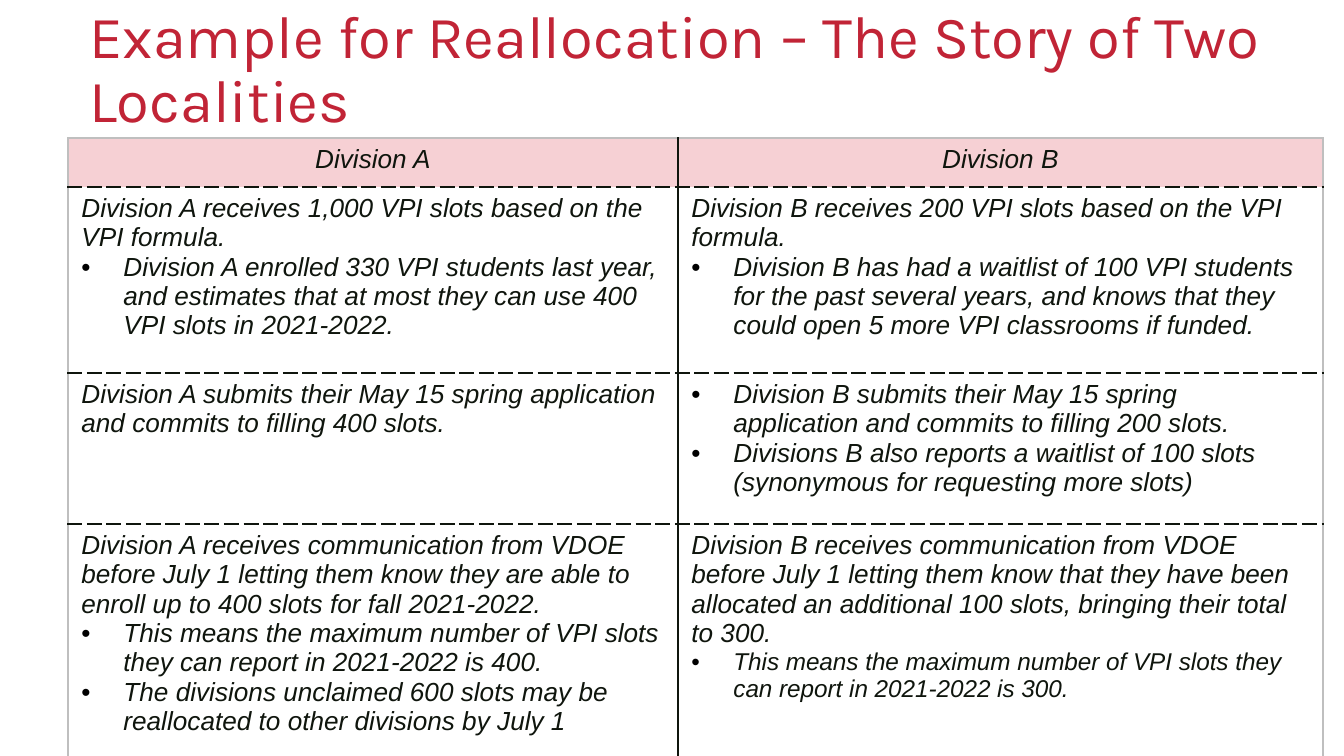
from dataclasses import dataclass

from lxml.etree import SubElement
from pptx import Presentation
from pptx.dml.color import RGBColor
from pptx.enum.text import MSO_ANCHOR as Anchor, PP_ALIGN as Align
from pptx.oxml.ns import qn
from pptx.util import Pt

EMU_PER_PX = 914400 / 134.4
INK = "0F150D"
OUTLINE = "BFBFBF"
HEADER_FILL = "F6D0D4"
BODY_FILL = "FFFFFF"
TITLE_COLOR = "C12436"
BULLET_INDENT = 42


@dataclass(frozen=True)
class Line:
    text: str
    bullet: bool = False
    size: int = 14
    align: Align = Align.LEFT


@dataclass(frozen=True)
class Row:
    height: int
    cells: tuple[list[Line], list[Line]]
    fill: str = BODY_FILL


COLUMN_WIDTHS = (610, 645)
ROWS = [
    Row(49, (
        [Line("Division A", align=Align.CENTER)],
        [Line("Division B", align=Align.CENTER)],
    ), HEADER_FILL),
    Row(186, (
        [Line("Division A receives 1,000 VPI slots based on the VPI formula."),
         Line("Division A enrolled 330 VPI students last year, and estimates that "
              "at most they can use 400 VPI slots in 2021-2022.", True)],
        [Line("Division B receives 200 VPI slots based on the VPI formula."),
         Line("Division B has had a waitlist of 100 VPI students for the past several "
              "years, and knows that they could open 5 more VPI classrooms if funded.", True)],
    )),
    Row(151, (
        [Line("Division A submits their May 15 spring application and commits to "
              "filling 400 slots.")],
        [Line("Division B submits their May 15 spring application and commits to "
              "filling 200 slots.", True),
         Line("Divisions B also reports a waitlist of 100 slots (synonymous for "
              "requesting more slots)", True)],
    )),
    Row(220, (
        [Line("Division A receives communication from VDOE before July 1 letting them "
              "know they are able to enroll up to 400 slots for fall 2021-2022."),
         Line("This means the maximum number of VPI slots they can report in "
              "2021-2022 is 400.", True),
         Line("The divisions unclaimed 600 slots may be reallocated to other "
              "divisions by July 1", True)],
        [Line("Division B receives communication from VDOE before July 1 letting them "
              "know that they have been allocated an additional 100 slots, bringing "
              "their total to 300."),
         Line("This means the maximum number of VPI slots they can report in "
              "2021-2022 is 300.", True, 13)],
    )),
]


def px(length: int) -> int:
    return round(length * EMU_PER_PX)


def rgb(color: str) -> RGBColor:
    return RGBColor.from_string(color)


def format_runs(paragraph, font_name: str, size: int, color: str, italic: bool) -> None:
    for run in paragraph.runs:
        run.font.name = font_name
        run.font.size = Pt(size)
        run.font.italic = italic
        run.font.color.rgb = rgb(color)


def add_bullet(paragraph) -> None:
    properties = paragraph._p.get_or_add_pPr()
    properties.set("marL", str(px(BULLET_INDENT)))
    properties.set("indent", str(-px(BULLET_INDENT)))
    bullet_color = SubElement(properties, qn("a:buClr"))
    SubElement(bullet_color, qn("a:srgbClr"), val="000000")
    SubElement(properties, qn("a:buFont"), typeface="Arial")
    SubElement(properties, qn("a:buChar"), char="•")


def add_border(cell, side: str, color: str, dash: str) -> None:
    properties = cell._tc.get_or_add_tcPr()
    border = SubElement(properties, qn(f"a:ln{side}"), w=str(Pt(1)))
    fill = SubElement(border, qn("a:solidFill"))
    SubElement(fill, qn("a:srgbClr"), val=color)
    SubElement(border, qn("a:prstDash"), val=dash)


def fill_cell(cell, lines: list[Line], fill: str, outer_sides: str) -> None:
    for side in "LRTB":
        outer = side in outer_sides
        dash = "sysDash" if side in "TB" and not outer else "solid"
        add_border(cell, side, OUTLINE if outer else INK, dash)
    cell.fill.solid()
    cell.fill.fore_color.rgb = rgb(fill)
    cell.text_frame.text = "\n".join(line.text for line in lines)
    for paragraph, line in zip(cell.text_frame.paragraphs, lines):
        if line.bullet:
            add_bullet(paragraph)
        paragraph.alignment = line.align
        format_runs(paragraph, "Arial", line.size, INK, True)


def add_title(slide, text: str) -> None:
    shape = slide.shapes.add_textbox(px(79), px(17), px(1265), px(108))
    frame = shape.text_frame
    frame.word_wrap = True
    frame.vertical_anchor = Anchor.MIDDLE
    frame.margin_left = frame.margin_right = px(10)
    frame.margin_top = frame.margin_bottom = px(5)
    frame.text = text
    paragraph = frame.paragraphs[0]
    paragraph.line_spacing = 0.9
    format_runs(paragraph, "Karla", 32, TITLE_COLOR, False)


def add_division_table(slide) -> None:
    table = slide.shapes.add_table(
        len(ROWS), len(COLUMN_WIDTHS), px(68), px(138),
        px(sum(COLUMN_WIDTHS)), px(sum(row.height for row in ROWS)),
    ).table
    table.first_row = False
    table.horz_banding = False
    for column, width in zip(table.columns, COLUMN_WIDTHS):
        column.width = px(width)
    for row_index, row in enumerate(ROWS):
        table.rows[row_index].height = px(row.height)
        vertical = {0: "T", len(ROWS) - 1: "B"}.get(row_index, "")
        for column_index, lines in enumerate(row.cells):
            outer_sides = vertical + "LR"[column_index]
            fill_cell(table.cell(row_index, column_index), lines, row.fill, outer_sides)


def main() -> None:
    presentation = Presentation()
    presentation.slide_width = px(1344)
    presentation.slide_height = px(756)
    slide = presentation.slides.add_slide(presentation.slide_layouts[6])
    add_title(slide, "Example for Reallocation – The Story of Two Localities")
    add_division_table(slide)
    presentation.save("out.pptx")


if __name__ == "__main__":
    main()
